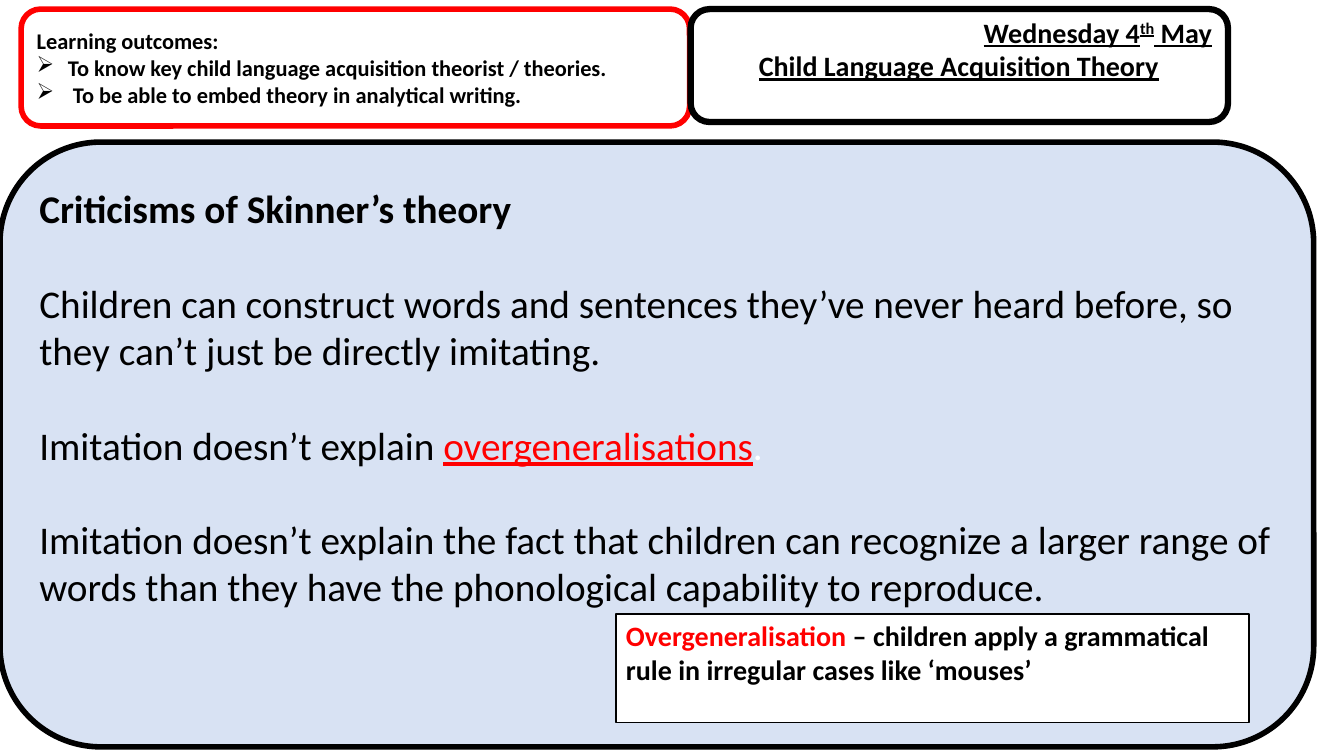
from dataclasses import dataclass

from lxml import etree
from pptx import Presentation
from pptx.dml.color import RGBColor
from pptx.enum.shapes import MSO_SHAPE
from pptx.enum.text import MSO_ANCHOR, MSO_AUTO_SIZE, PP_ALIGN
from pptx.oxml.ns import qn
from pptx.util import Inches, Pt

BLACK = RGBColor(0x00, 0x00, 0x00)
WHITE = RGBColor(0xFF, 0xFF, 0xFF)
RED = RGBColor(0xFF, 0x00, 0x00)
PALE_BLUE = RGBColor(0xD8, 0xE2, 0xF3)
FONT = "Calibri"
ROUNDED, SQUARE = MSO_SHAPE.ROUNDED_RECTANGLE, MSO_SHAPE.RECTANGLE
LEFT, CENTER, RIGHT = PP_ALIGN.LEFT, PP_ALIGN.CENTER, PP_ALIGN.RIGHT
TOP, MIDDLE = MSO_ANCHOR.TOP, MSO_ANCHOR.MIDDLE


@dataclass(frozen=True)
class Panel:
    left: float
    top: float
    width: float
    height: float
    outline: RGBColor
    weight: float
    fill: RGBColor = WHITE
    outline_shape: MSO_SHAPE = ROUNDED


@dataclass(frozen=True)
class Span:
    text: str
    color: RGBColor = BLACK
    underline: bool = False
    superscript: bool = False


CRITICISMS = Panel(0, 1.41, 13.03, 6, BLACK, 4, PALE_BLUE)
OUTCOMES = Panel(0.21, 0.09, 6.63, 1.16, RED, 4)
LESSON = Panel(6.85, 0.09, 5.33, 1.12, BLACK, 4.5)
DEFINITION = Panel(6.11, 6.09, 6.28, 1.08, BLACK, 1, outline_shape=SQUARE)


def draw_panel(slide, panel: Panel):
    shape = slide.shapes.add_shape(
        panel.outline_shape, Inches(panel.left), Inches(panel.top),
        Inches(panel.width), Inches(panel.height))
    shape.shadow.inherit = False
    shape.fill.solid()
    shape.fill.fore_color.rgb = panel.fill
    shape.line.color.rgb = panel.outline
    shape.line.width = Pt(panel.weight)
    return shape


def place(holder, left: float, top: float, width: float, height: float) -> None:
    """Move a placeholder and bring it in front of the panels."""
    holder.left, holder.top = Inches(left), Inches(top)
    holder.width, holder.height = Inches(width), Inches(height)
    holder.element.getparent().append(holder.element)


def prepare_frame(shape, anchor=TOP):
    frame = shape.text_frame
    frame.word_wrap = True
    frame.auto_size = MSO_AUTO_SIZE.NONE
    frame.vertical_anchor = anchor
    return frame


def write(frame, *spans: Span, size: int, bold: bool = False, align=LEFT,
          after: float = 0, bullet: str = "") -> None:
    """Add one paragraph, using the empty first one if there is one."""
    first = frame.paragraphs[0]
    paragraph = frame.add_paragraph() if first.runs else first
    paragraph.alignment = align
    paragraph.line_spacing = 1.0
    paragraph.space_before, paragraph.space_after = Pt(0), Pt(after)
    properties = paragraph._p.get_or_add_pPr()
    indent = Inches(0.31) if bullet else 0
    properties.set("marL", str(indent))
    properties.set("indent", str(-indent))
    if bullet:
        etree.SubElement(properties, qn("a:buChar")).set("char", bullet)
    else:
        etree.SubElement(properties, qn("a:buNone"))
    for span in spans:
        run = paragraph.add_run()
        run.text = span.text
        run.font.name, run.font.size = FONT, Pt(size)
        run.font.bold, run.font.underline = bold, span.underline
        run.font.color.rgb = span.color
        if span.superscript:
            run._r.get_or_add_rPr().set("baseline", "30000")


def main() -> None:
    presentation = Presentation()
    presentation.slide_width, presentation.slide_height = Inches(13.33), Inches(7.5)
    slide = presentation.slides.add_slide(presentation.slide_layouts[1])
    title, body = slide.shapes.title, slide.placeholders[1]

    draw_panel(slide, CRITICISMS)
    place(body, 0.29, 1.78, 12.47, 4.4)
    criticisms = prepare_frame(body)
    write(criticisms, Span("Criticisms of Skinner’s theory"), size=28, bold=True, after=34)
    write(criticisms, Span("Children can construct words and sentences they’ve never heard "
                           "before, so they can’t just be directly imitating."),
          size=28, after=34)
    write(criticisms, Span("Imitation doesn’t explain "),
          Span("overgeneralisations", RED, underline=True), Span(".", WHITE),
          size=28, after=34)
    write(criticisms, Span("Imitation doesn’t explain the fact that children can recognize a "
                           "larger range of words than they have the phonological capability "
                           "to reproduce."), size=28)

    outcomes = prepare_frame(draw_panel(slide, OUTCOMES), MIDDLE)
    write(outcomes, Span("Learning outcomes:"), size=16, bold=True)
    for outcome in ("To know key child language acquisition theorist / theories.",
                    " To be able to embed theory in analytical writing."):
        write(outcomes, Span(outcome), size=16, bold=True, bullet="➢")

    draw_panel(slide, LESSON)
    place(title, 6.9, 0.1, 5.22, 1.1)
    lesson = prepare_frame(title)
    write(lesson, Span("Wednesday 4", underline=True),
          Span("th", underline=True, superscript=True), Span(" May", underline=True),
          size=20, bold=True, align=RIGHT)
    write(lesson, Span("Child Language Acquisition Theory", underline=True),
          size=20, bold=True, align=CENTER)

    definition = prepare_frame(draw_panel(slide, DEFINITION))
    write(definition, Span("Overgeneralisation", RED),
          Span(" – children apply a grammatical rule in irregular cases like ‘mouses’"),
          size=20, bold=True)

    presentation.save("out.pptx")


if __name__ == "__main__":
    main()
